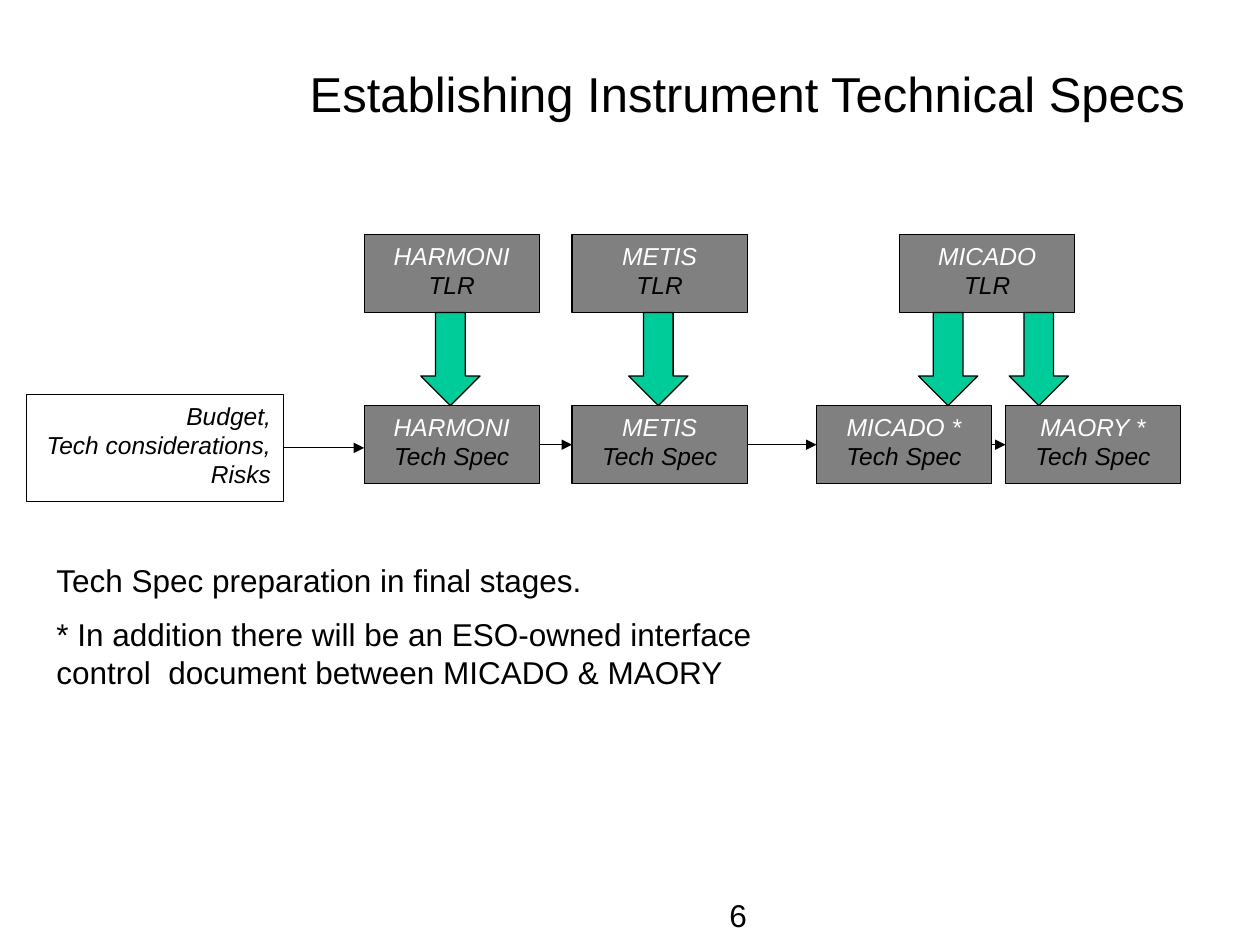
from dataclasses import dataclass

from lxml import etree
from pptx import Presentation, util as u
from pptx.dml.color import RGBColor
from pptx.enum import shapes, text
from pptx.oxml.ns import qn


@dataclass(frozen=True)
class Theme:
    font: str = "Arial"
    black: str = "000000"
    white: str = "FFFFFF"
    gray: str = "808080"
    green: str = "00CC99"
    title: int = 28
    body: int = 18
    label: int = 14
    line: float = 0.75


@dataclass(frozen=True)
class Area:
    """A rectangle in percent of the slide's width and height."""
    x: float
    y: float
    w: float
    h: float


@dataclass(frozen=True)
class Box:
    name: str
    kind: str
    col: float
    row: float


T = Theme()
WIDE, HIGH = u.Inches(10), u.Inches(7.5)
BOX_W, BOX_H = 13.9, 8.27
TOP, LOW = 24.8, 42.93
ARROW_W = 4.7

TLRS = [Box(name, "TLR", col, TOP) for name, col in
        (("HARMONI", 28.9), ("METIS", 45.4), ("MICADO", 71.4))]
SPECS = [Box(name, "Tech Spec", col, LOW) for name, col in
         (("HARMONI", 28.9), ("METIS", 45.4), ("MICADO *", 64.8), ("MAORY *", 79.8))]
FLOWS = (35.75, 52.25, 75.25, 82.45)  # centres of the down arrows
NOTES = (
    ("Tech Spec preparation in final stages.", Area(3.5, 58.67, 58, 5.33)),
    ("* In addition there will be an ESO-owned interface control  document "
     "between MICADO & MAORY", Area(3.5, 64.4, 60.3, 9.47)),
)


def across(part: float) -> int:
    return round(WIDE * part / 100)


def down(part: float) -> int:
    return round(HIGH * part / 100)


def place(area: Area) -> tuple[int, int, int, int]:
    return across(area.x), down(area.y), across(area.w), down(area.h)


def write(shape, lines: list[str], size: int, align=text.PP_ALIGN.LEFT,
          tints: tuple[str, ...] = (), italic: bool = False) -> None:
    """Put one paragraph per line; tints gives each line's colour."""
    frame = shape.text_frame
    frame.word_wrap = True
    frame.vertical_anchor = text.MSO_ANCHOR.TOP
    frame.text = "\n".join(lines)
    for para, tint in zip(frame.paragraphs, tints or (T.black,) * len(lines)):
        para.alignment = align
        font = para.font
        font.name, font.size, font.italic = T.font, u.Pt(size), italic
        font.color.rgb = RGBColor.from_string(tint)


def draw_shape(slide, preset, area: Area, fill: str):
    shape = slide.shapes.add_shape(preset, *place(area))
    shape.shadow.inherit = False
    shape.fill.solid()
    shape.fill.fore_color.rgb = RGBColor.from_string(fill)
    shape.line.color.rgb = RGBColor.from_string(T.black)
    shape.line.width = u.Pt(T.line)
    return shape


def draw_box(slide, box: Box):
    shape = draw_shape(slide, shapes.MSO_SHAPE.RECTANGLE,
                       Area(box.col, box.row, BOX_W, BOX_H), T.gray)
    write(shape, [box.name, box.kind], T.label, text.PP_ALIGN.CENTER,
          (T.white, T.black), True)
    return shape


def draw_text(slide, words: str, area: Area, size: int, align=text.PP_ALIGN.LEFT):
    shape = slide.shapes.add_textbox(*place(area))
    write(shape, [words], size, align)
    return shape


def link(slide, start, end, level: bool = False) -> None:
    """Join right side to left side; level keeps the line at the start's height."""
    y = start.top + start.height // 2
    line = slide.shapes.add_connector(shapes.MSO_CONNECTOR.STRAIGHT,
                                      start.left + start.width, y, end.left, y)
    line.begin_connect(start, 3)
    if not level:
        line.end_connect(end, 1)
    line.line.color.rgb = RGBColor.from_string(T.black)
    line.line.width = u.Pt(T.line)
    etree.SubElement(line.line._get_or_add_ln(), qn("a:tailEnd"), type="triangle")
    etree.SubElement(line._element.spPr, qn("a:effectLst"))


def main() -> None:
    deck = Presentation()
    deck.slide_width, deck.slide_height = WIDE, HIGH
    slide = deck.slides.add_slide(deck.slide_layouts[6])

    title = draw_text(slide, "Establishing Instrument Technical Specs",
                      Area(11.4, 6.67, 83.6, 8.4), T.title, text.PP_ALIGN.RIGHT)
    title.text_frame.paragraphs[0].line_spacing = 0.93

    for box in TLRS:
        draw_box(slide, box)
    for mid in FLOWS:
        area = Area(mid - ARROW_W / 2, TOP + BOX_H, ARROW_W, LOW - TOP - BOX_H)
        draw_shape(slide, shapes.MSO_SHAPE.DOWN_ARROW, area, T.green)

    budget = draw_shape(slide, shapes.MSO_SHAPE.RECTANGLE,
                        Area(2.1, 41.73, 20.4, 11.33), T.white)
    budget.fill.background()
    write(budget, ["Budget,", "Tech considerations,", "Risks"], T.label,
          text.PP_ALIGN.RIGHT, italic=True)

    specs = [draw_box(slide, box) for box in SPECS]
    link(slide, budget, specs[0], level=True)
    for start, end in zip(specs, specs[1:]):
        link(slide, start, end)

    for words, area in NOTES:
        draw_text(slide, words, area, T.body)
    draw_text(slide, "6", Area(56.9, 94.13, 6.9, 5.33), T.body)
    deck.save("out.pptx")


if __name__ == "__main__":
    main()
